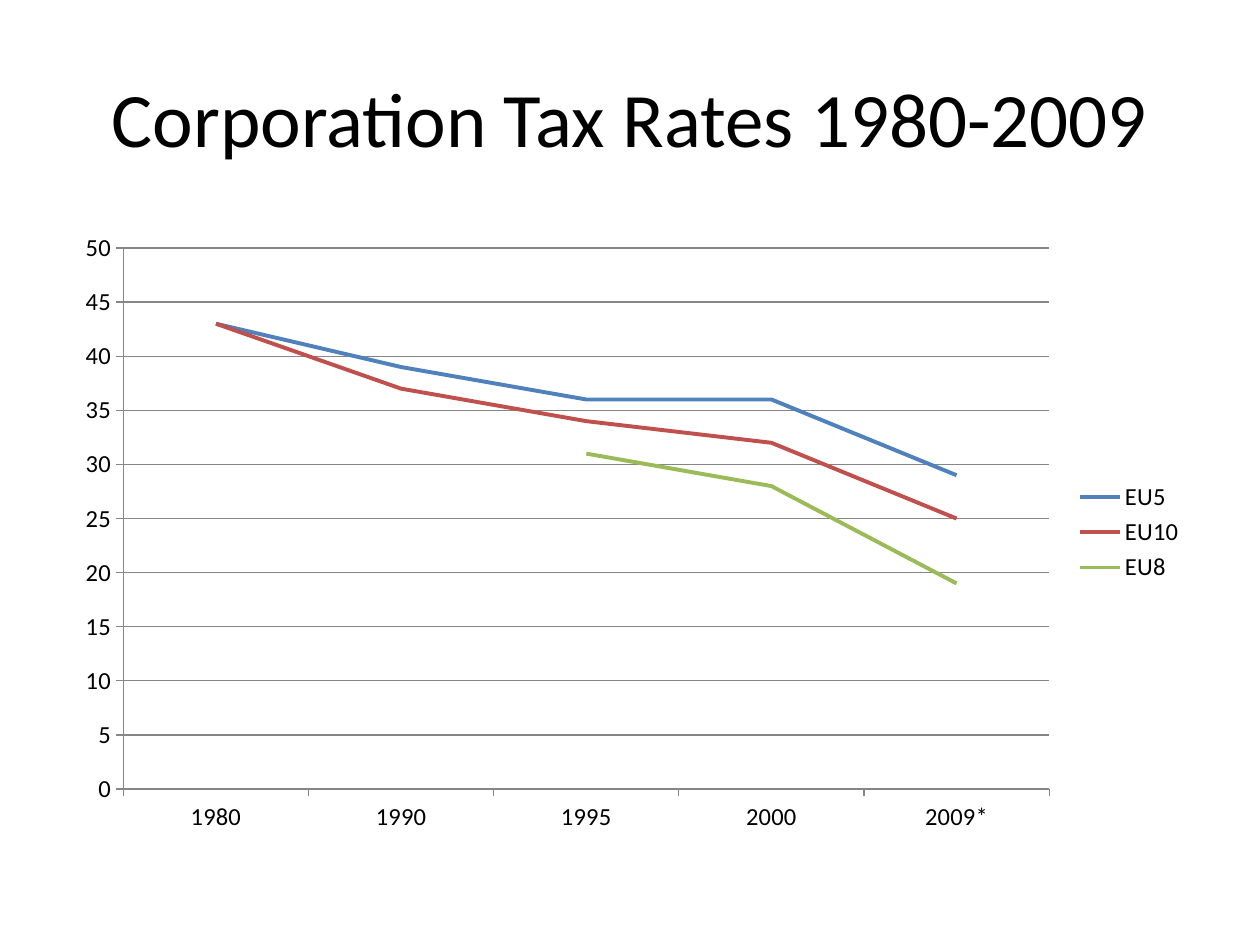
from dataclasses import dataclass

from pptx import Presentation
from pptx.chart.data import CategoryChartData
from pptx.dml.color import RGBColor as RGB
from pptx.enum.chart import XL_CHART_TYPE as ChartType
from pptx.enum.chart import XL_LEGEND_POSITION as LegendPos
from pptx.enum.chart import XL_TICK_MARK as Tick
from pptx.enum.text import MSO_ANCHOR as Anchor
from pptx.enum.text import PP_ALIGN as Align
from pptx.util import Inches, Pt


@dataclass(frozen=True)
class Theme:
    font: str = "Calibri"
    title_size: Pt = Pt(44)
    chart_size: Pt = Pt(14)
    line_width: Pt = Pt(2.25)
    axis_width: Pt = Pt(0.75)
    text: RGB = RGB.from_string("000000")
    axis: RGB = RGB.from_string("868686")
    background: RGB = RGB.from_string("FFFFFF")
    series: tuple = ("4F81BD", "C0504D", "9BBB59")


theme = Theme()
years = ["1980", "1990", "1995", "2000", "2009*"]
tax_rates = {
    "EU5": [43, 39, 36, 36, 29],
    "EU10": [43, 37, 34, 32, 25],
    "EU8": [None, None, 31, 28, 19],
}

prs = Presentation()
prs.slide_width, prs.slide_height = Inches(10), Inches(7.5)
s = prs.slides.add_slide(prs.slide_layouts[5])
s.background.fill.solid()
s.background.fill.fore_color.rgb = theme.background

title = s.shapes.title
title.left, title.top = Inches(0.5), Inches(0.3)
title.width, title.height = Inches(9), Inches(1.25)
tf = title.text_frame
tf.vertical_anchor = Anchor.MIDDLE
p = tf.paragraphs[0]
p.alignment = Align.CENTER
r = p.add_run()
r.text = "Corporation Tax Rates 1980-2009"
r.font.name = theme.font
r.font.size = theme.title_size
r.font.color.rgb = theme.text

data = CategoryChartData()
data.categories = years
for name, rates in tax_rates.items():
    data.add_series(name, rates)

chart = s.shapes.add_chart(
    ChartType.LINE, Inches(0.5), Inches(1.75), Inches(9), Inches(4.95), data
).chart
chart.has_title = False
chart.font.name = theme.font
chart.font.size = theme.chart_size
chart.font.color.rgb = theme.text
chart.has_legend = True
chart.legend.position = LegendPos.RIGHT
chart.legend.include_in_layout = False

value_axis = chart.value_axis
value_axis.minimum_scale = 0
value_axis.maximum_scale = 50
value_axis.major_unit = 5
value_axis.has_major_gridlines = True
for axis in (chart.category_axis, value_axis):
    axis.major_tick_mark = Tick.OUTSIDE
    axis.minor_tick_mark = Tick.NONE
for part in (chart.category_axis, value_axis, value_axis.major_gridlines):
    part.format.line.color.rgb = theme.axis
    part.format.line.width = theme.axis_width

chart.plots[0].vary_by_categories = False
for series, color in zip(chart.plots[0].series, theme.series):
    series.smooth = False
    series.format.line.color.rgb = RGB.from_string(color)
    series.format.line.width = theme.line_width

prs.save("out.pptx")
